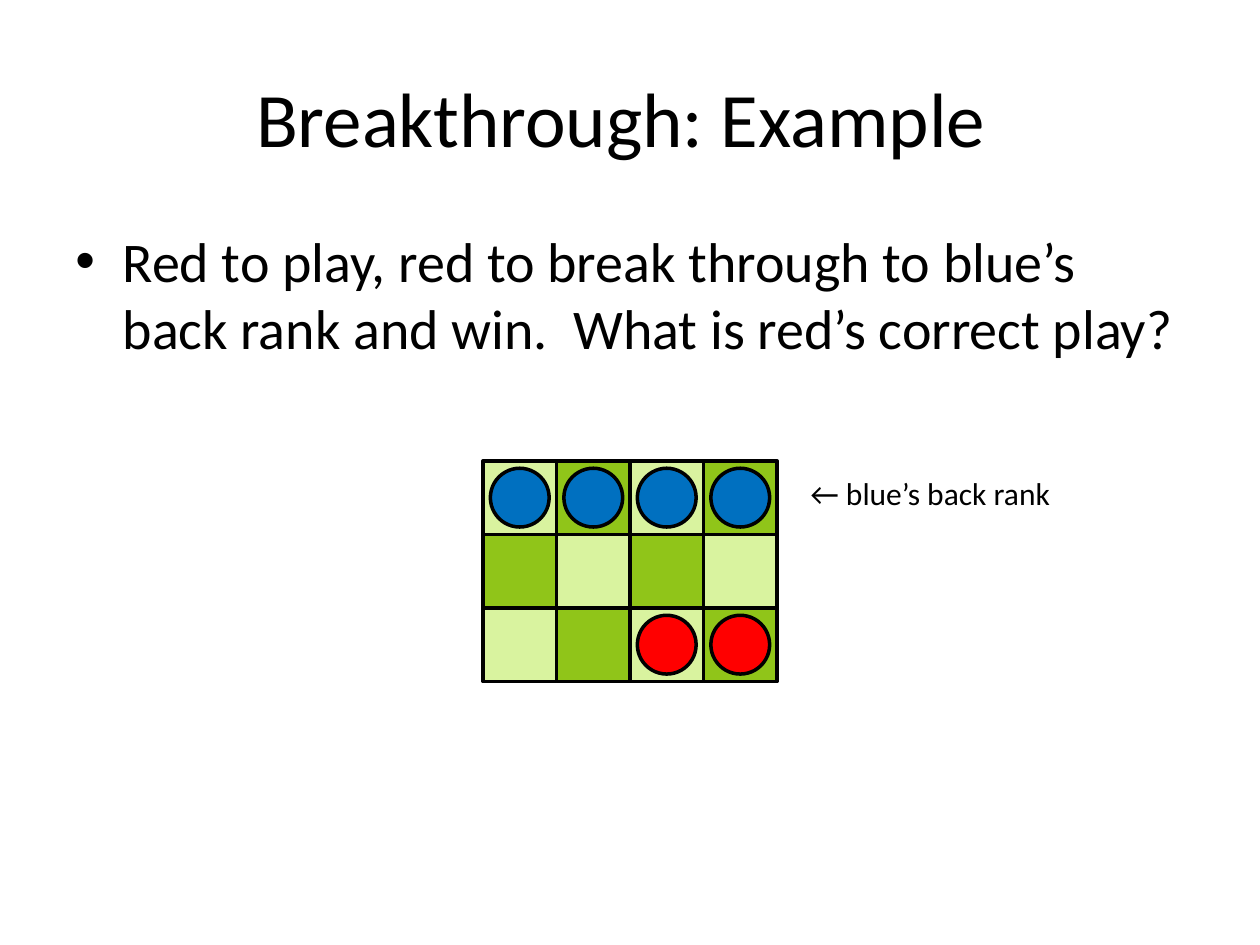
from dataclasses import dataclass

from lxml.etree import SubElement
from pptx import Presentation
from pptx.dml.color import RGBColor
from pptx.enum.shapes import MSO_SHAPE as Shape
from pptx.enum.text import MSO_ANCHOR as Anchor, MSO_AUTO_SIZE as AutoSize, PP_ALIGN as Align
from pptx.oxml.ns import qn
from pptx.util import Pt

SCALE = 7620  # EMU per px, 120 px to the inch


@dataclass(frozen=True)
class Theme:
    font: str = "Calibri"
    ink: str = "000000"
    light: str = "D9F39F"
    dark: str = "90C519"
    blue: str = "0070C0"
    red: str = "FF0000"
    title_size: int = 44
    body_size: int = 32
    label_size: int = 18
    outline: int = 2


theme = Theme()


def write_text(box, text, size, align=Align.LEFT, anchor=Anchor.TOP, wrap=True,
               fit=AutoSize.NONE):
    frame = box.text_frame
    frame.word_wrap, frame.auto_size, frame.vertical_anchor = wrap, fit, anchor
    para = frame.paragraphs[0]
    para.alignment = align
    span = para.add_run()
    span.text = text
    span.font.name, span.font.size = theme.font, Pt(size)
    span.font.color.rgb = RGBColor.from_string(theme.ink)
    return para


def draw_shape(page, kind, left, top, size, fill):
    shape = page.shapes.add_shape(kind, *(n * SCALE for n in (left, top, size, size)))
    shape.shadow.inherit = False
    shape.fill.solid()
    shape.fill.fore_color.rgb = RGBColor.from_string(fill)
    shape.line.color.rgb = RGBColor.from_string(theme.ink)
    shape.line.width = Pt(theme.outline)


deck = Presentation()
deck.slide_width, deck.slide_height = 1200 * SCALE, 900 * SCALE
page = deck.slides.add_slide(deck.slide_layouts[5])

# Title
title = page.shapes.title
title.left, title.top, title.width, title.height = (n * SCALE for n in (60, 36, 1080, 150))
write_text(title, "Breakthrough: Example ", theme.title_size, align=Align.CENTER,
           anchor=Anchor.MIDDLE)

# Bulleted question
question = page.shapes.add_textbox(*(n * SCALE for n in (60, 210, 1080, 594)))
para = write_text(
    question,
    "Red to play, red to break through to blue’s back rank and win.  What is red’s correct play?",
    theme.body_size)
indent = 45 * SCALE
props = para._p.get_or_add_pPr()
props.set("marL", str(indent))
props.set("indent", str(-indent))
SubElement(SubElement(props, qn("a:spcBef")), qn("a:spcPct"), val="20000")
SubElement(props, qn("a:buFont"), typeface="Arial")
SubElement(props, qn("a:buChar"), char="•")

# Board squares
board_left, board_top, cell = 460, 439, 70
rows = ["BBBB", "....", "..RR"]
for row, marks in enumerate(rows):
    for col in range(len(marks)):
        fill = theme.dark if (row + col) % 2 else theme.light
        draw_shape(page, Shape.RECTANGLE, board_left + col * cell, board_top + row * cell,
                   cell, fill)

# Pieces, centred in their squares
inset = 7
piece_fills = {"B": theme.blue, "R": theme.red}
for row, marks in enumerate(rows):
    for col, mark in enumerate(marks):
        if mark in piece_fills:
            draw_shape(page, Shape.OVAL, board_left + col * cell + inset,
                       board_top + row * cell + inset, cell - 2 * inset, piece_fills[mark])

# Back rank label
label = page.shapes.add_textbox(*(n * SCALE for n in (760, 446, 257, 48)))
write_text(label, "← blue’s back rank", theme.label_size, wrap=False,
           fit=AutoSize.SHAPE_TO_FIT_TEXT)

deck.save("out.pptx")
